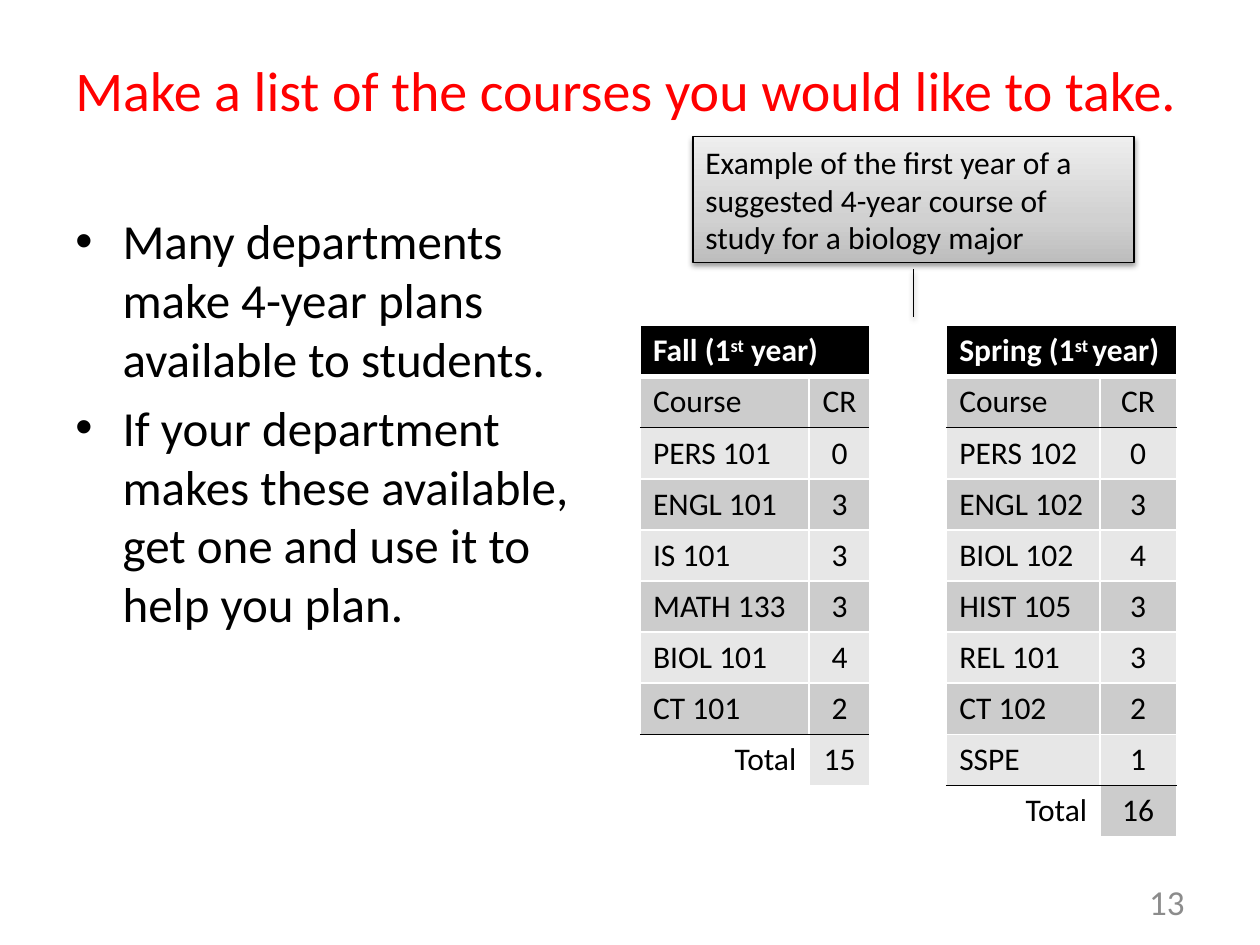
from lxml import etree
from pptx import Presentation
from pptx.dml.color import RGBColor
from pptx.enum.shapes import MSO_SHAPE
from pptx.enum.text import MSO_ANCHOR, PP_ALIGN
from pptx.oxml import parse_xml
from pptx.util import Pt

LEFT, CENTER, RIGHT = PP_ALIGN.LEFT, PP_ALIGN.CENTER, PP_ALIGN.RIGHT
TOP, MIDDLE = MSO_ANCHOR.TOP, MSO_ANCHOR.MIDDLE
CALLOUT = MSO_SHAPE.LINE_CALLOUT_1
NS = "http://schemas.openxmlformats.org/drawingml/2006/main"
FONT = "Calibri"
BLACK, WHITE, RED, GRAY = "000000", "FFFFFF", "FF0000", "8C8C8C"
BANDS = ("E7E7E7", "CCCCCC")

TITLE = "Make a list of the courses you would like to take."
ADVICE = [
    "Many departments make 4-year plans available to students.",
    "If your department makes these available, get one and use it to help you plan.",
]
EXAMPLE = "Example of the first year of a suggested 4-year course of study for a biology major"
PAGE = "13"

# Heading runs: before, superscript, after. Columns: first, credits.
SEMESTERS = [
    {"heading": ("Fall (1", "st", " year)"), "columns": (0, 2), "total": "15",
     "courses": [("PERS 101", "0"), ("ENGL 101", "3"), ("IS 101", "3"),
                 ("MATH 133", "3"), ("BIOL 101", "4"), ("CT 101", "2")]},
    {"heading": ("Spring (1", "st ", "year)"), "columns": (4, 5), "total": "16",
     "courses": [("PERS 102", "0"), ("ENGL 102", "3"), ("BIOL 102", "4"),
                 ("HIST 105", "3"), ("REL 101", "3"), ("CT 102", "2"), ("SSPE", "1")]},
]
COLUMN_WIDTHS = (43.75, 52.5, 35, 43.75, 87.5, 43.75)
ROW_HEIGHT = 29.2
ROW_COUNT = 3 + max(len(s["courses"]) for s in SEMESTERS)


def rgb(color):
    return RGBColor.from_string(color)


def add_run(paragraph, text, size, color, bold=False):
    run = paragraph.add_run()
    run.text = text
    run.font.name, run.font.size, run.font.bold = FONT, Pt(size), bold
    run.font.color.rgb = rgb(color)
    return run


def add_text(slide, box, paragraphs, size, color, anchor=MIDDLE, align=LEFT):
    frame = slide.shapes.add_textbox(*map(Pt, box)).text_frame
    frame.word_wrap = True
    frame.vertical_anchor = anchor
    for i, text in enumerate(paragraphs):
        paragraph = frame.add_paragraph() if i else frame.paragraphs[0]
        paragraph.alignment = align
        add_run(paragraph, text, size, color)
    return frame


def add_bullets(frame, indent, space_before):
    for paragraph in frame.paragraphs:
        paragraph.space_before = Pt(space_before)
        props = paragraph._p.get_or_add_pPr()
        props.set("marL", str(Pt(indent)))
        props.set("indent", str(-Pt(indent)))
        etree.SubElement(props, f"{{{NS}}}buFont", typeface="Arial")
        etree.SubElement(props, f"{{{NS}}}buChar", char="•")


def add_example(slide):
    callout = slide.shapes.add_shape(CALLOUT, Pt(396), Pt(78), Pt(252), Pt(72))
    for i, value in enumerate((1.05, 0.5, 1.43, 0.5)):
        callout.adjustments[i] = value
    callout.fill.background()
    callout.line.color.rgb = rgb(BLACK)
    callout.line.width = Pt(0.75)
    props = callout._element.spPr
    stops = "".join(
        f'<a:gs pos="{at * 1000}"><a:srgbClr val="{color}"/></a:gs>'
        for at, color in ((0, "BDBDBD"), (35, "D1D1D1"), (100, "EEEEEE")))
    gradient = parse_xml(
        f'<a:gradFill xmlns:a="{NS}" rotWithShape="1"><a:gsLst>{stops}</a:gsLst>'
        '<a:lin ang="16200000" scaled="0"/></a:gradFill>')
    props.replace(props.find(f"{{{NS}}}noFill"), gradient)
    props.append(parse_xml(
        f'<a:effectLst xmlns:a="{NS}"><a:outerShdw blurRad="{Pt(3.1)}" dist="{Pt(1.6)}" '
        f'dir="5400000" rotWithShape="0"><a:srgbClr val="{BLACK}">'
        '<a:alpha val="38000"/></a:srgbClr></a:outerShdw></a:effectLst>'))
    frame = callout.text_frame
    frame.word_wrap = True
    frame.vertical_anchor = MIDDLE
    frame.paragraphs[0].alignment = LEFT
    add_run(frame.paragraphs[0], EXAMPLE, 18, BLACK)


def set_borders(cell, top, bottom):
    side = (WHITE, 1)
    edges = (("lnL", side), ("lnR", side), ("lnT", top), ("lnB", bottom))
    props = cell._tc.get_or_add_tcPr()
    for i, (tag, (color, width)) in enumerate(edges):
        props.insert(i, parse_xml(
            f'<a:{tag} xmlns:a="{NS}" w="{Pt(width)}"><a:solidFill>'
            f'<a:srgbClr val="{color}"/></a:solidFill></a:{tag}>'))


def edge_below(row, column):
    """Colour and width of the rule under a cell."""
    if row == 0:
        return WHITE, 3
    for semester in SEMESTERS:
        first, credits = semester["columns"]
        if first <= column <= credits and row in (1, 1 + len(semester["courses"])):
            return BLACK, 1
    return WHITE, 1


def fill_cell(cell, color):
    cell.fill.solid()
    cell.fill.fore_color.rgb = rgb(color)


def write_cell(cell, text, align):
    paragraph = cell.text_frame.paragraphs[0]
    paragraph.alignment = align
    add_run(paragraph, text, 18, BLACK)


def add_semester(table, semester):
    first, credits = semester["columns"]
    heading = table.cell(0, first)
    heading.merge(table.cell(0, credits))
    fill_cell(heading, BLACK)
    for i, text in enumerate(semester["heading"]):
        run = add_run(heading.text_frame.paragraphs[0], text, 18, WHITE, bold=True)
        if i == 1:
            run._r.get_or_add_rPr().set("baseline", "30000")

    lines = [("Course", "CR"), *semester["courses"], ("Total", semester["total"])]
    for row, (course, credit) in enumerate(lines, start=1):
        is_total = row == len(lines)
        name, value = table.cell(row, first), table.cell(row, credits)
        if credits - first > 1:
            name.merge(table.cell(row, credits - 1))
        write_cell(name, course, RIGHT if is_total else LEFT)
        write_cell(value, credit, CENTER)
        fill_cell(value, BANDS[row % 2])
        if not is_total:
            fill_cell(name, BANDS[row % 2])


def add_plan(slide):
    columns = len(COLUMN_WIDTHS)
    table = slide.shapes.add_table(
        ROW_COUNT, columns, Pt(366), Pt(186),
        Pt(sum(COLUMN_WIDTHS)), Pt(ROW_HEIGHT * ROW_COUNT)).table
    for column, width in zip(table.columns, COLUMN_WIDTHS):
        column.width = Pt(width)
    for r, row in enumerate(table.rows):
        row.height = Pt(ROW_HEIGHT)
        for c, cell in enumerate(row.cells):
            cell.fill.background()
            top = edge_below(r - 1, c) if r else (WHITE, 1)
            set_borders(cell, top, edge_below(r, c))
    for semester in SEMESTERS:
        add_semester(table, semester)


def main():
    deck = Presentation()
    deck.slide_width, deck.slide_height = Pt(720), Pt(540)
    slide = deck.slides.add_slide(deck.slide_layouts[6])
    add_text(slide, (36, 6, 648, 90), [TITLE], 32, RED)
    advice = add_text(slide, (36, 117, 318, 356), ADVICE, 28, BLACK, anchor=TOP)
    add_bullets(advice, indent=27, space_before=5.6)
    add_plan(slide)
    add_text(slide, (516, 500.5, 168, 28.75), [PAGE], 20, GRAY, align=RIGHT)
    add_example(slide)
    deck.save("out.pptx")


if __name__ == "__main__":
    main()
